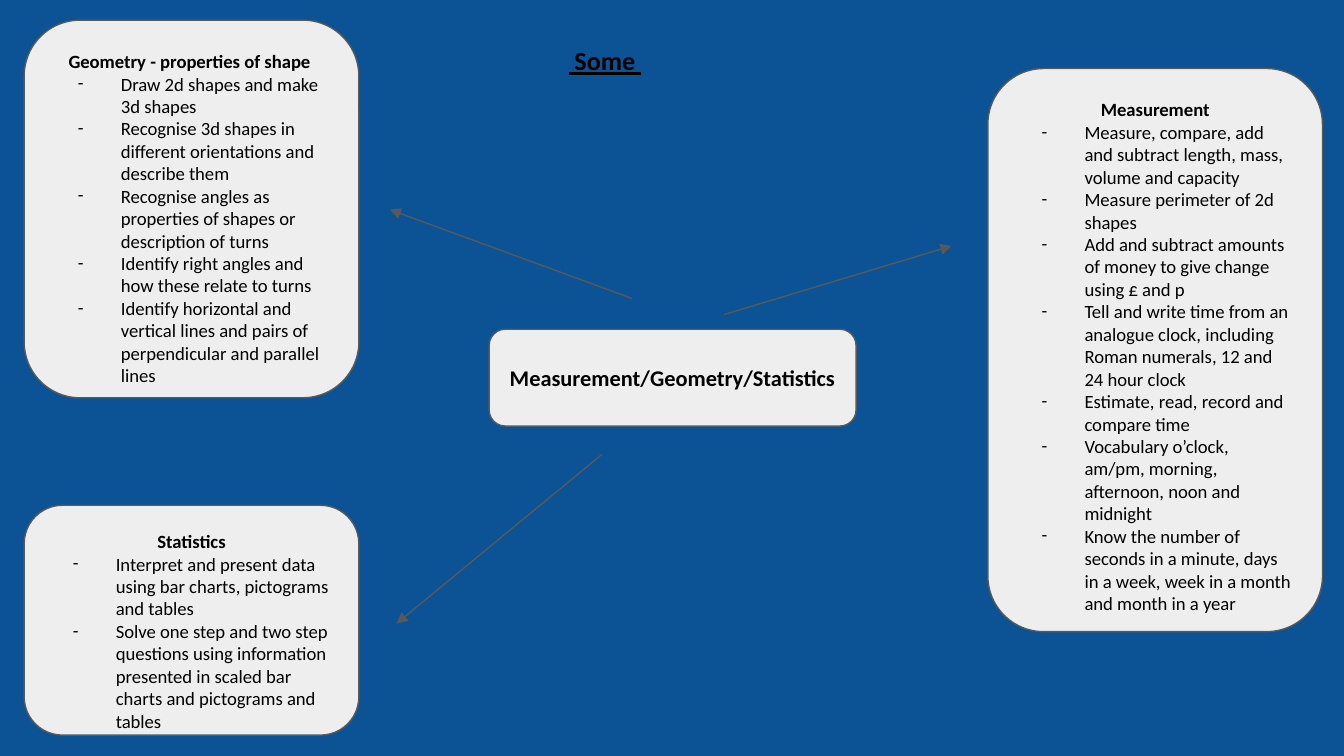
from lxml import etree
from pptx import Presentation
from pptx.dml.color import RGBColor
from pptx.enum import shapes, text
from pptx.oxml.ns import qn
from pptx.util import Inches, Pt

BLUE = RGBColor(0x0B, 0x53, 0x94)
PALE = RGBColor(0xEE, 0xEE, 0xEE)
GREY = RGBColor(0x59, 0x59, 0x59)
BLACK = RGBColor(0, 0, 0)
FONT = "Calibri"

TITLE = " Some "
TOPIC = "Measurement/Geometry/Statistics"
TOPIC_BOX = (3.64, 2.45, 2.73, 0.72)

# (left, top, width, height), heading, objectives
STRANDS = [
    ((7.35, 0.51, 2.49, 4.19), "Measurement", [
        "Measure, compare, add and subtract length, mass, volume and capacity",
        "Measure perimeter of 2d shapes",
        "Add and subtract amounts of money to give change using £ and p",
        "Tell and write time from an analogue clock, including Roman numerals, 12 and 24 hour clock",
        "Estimate, read, record and compare time",
        "Vocabulary o’clock, am/pm, morning, afternoon, noon and midnight",
        "Know the number of seconds in a minute, days in a week, week in a month and month in a year",
    ]),
    ((0.18, 0.15, 2.49, 2.81), "Geometry - properties of shape ", [
        "Draw 2d shapes and make 3d shapes",
        "Recognise 3d shapes in different orientations and describe them",
        "Recognise angles as properties of shapes or description of turns",
        "Identify right angles and how these relate to turns",
        "Identify horizontal and vertical lines and pairs of perpendicular and parallel lines",
    ]),
    ((0.18, 3.76, 2.49, 1.71), "Statistics", [
        "Interpret and present data using bar charts, pictograms and tables",
        "Solve one step and two step questions using information presented in scaled bar charts and pictograms and tables",
    ]),
]

# (from x, from y, to x, to y)
ARROWS = [
    (5.39, 2.34, 7.08, 1.83),
    (4.7, 2.22, 2.9, 1.56),
    (4.48, 3.38, 2.95, 4.64),
]


def set_frame(tf, anchor):
    tf.word_wrap = True
    tf.auto_size = text.MSO_AUTO_SIZE.NONE
    tf.vertical_anchor = anchor
    tf.margin_left = tf.margin_right = Inches(0.1)
    tf.margin_top = tf.margin_bottom = Inches(0.1)


def write(p, words, size, bold=True, align=text.PP_ALIGN.CENTER):
    p.text = words
    p.alignment = align
    for r in p.runs:
        r.font.name = FONT
        r.font.size = Pt(size)
        r.font.bold = bold
        r.font.color.rgb = BLACK


def add_dash(p):
    """Give the paragraph a hanging dash bullet."""
    pPr = p._p.get_or_add_pPr()
    pPr.set("marL", str(Inches(0.5)))
    pPr.set("indent", str(Inches(-0.32)))
    colour = etree.SubElement(pPr, qn("a:buClr"))
    etree.SubElement(colour, qn("a:srgbClr"), val=str(BLACK))
    etree.SubElement(pPr, qn("a:buFont"), typeface=FONT)
    etree.SubElement(pPr, qn("a:buChar"), char="-")


def add_box(s, box, anchor):
    sp = s.shapes.add_shape(shapes.MSO_SHAPE.ROUNDED_RECTANGLE, *map(Inches, box))
    sp.shadow.inherit = False
    sp.fill.solid()
    sp.fill.fore_color.rgb = PALE
    sp.line.color.rgb = GREY
    sp.line.width = Pt(0.75)
    set_frame(sp.text_frame, anchor)
    return sp.text_frame


def add_arrow(s, ends):
    arrow = s.shapes.add_connector(shapes.MSO_CONNECTOR.STRAIGHT, *map(Inches, ends))
    arrow.line.color.rgb = GREY
    arrow.line.width = Pt(0.75)
    spPr = arrow._element.spPr
    etree.SubElement(spPr.find(qn("a:ln")), qn("a:tailEnd"), type="triangle")
    etree.SubElement(spPr, qn("a:effectLst"))


def main():
    prs = Presentation()
    prs.slide_width = Inches(10)
    prs.slide_height = prs.slide_width * 9 // 16
    s = prs.slides.add_slide(prs.slide_layouts[5])
    s.background.fill.solid()
    s.background.fill.fore_color.rgb = BLUE

    title = s.shapes.title
    title.left, title.top = Inches(4.13), Inches(0.23)
    title.width, title.height = Inches(2.19), Inches(0.52)
    set_frame(title.text_frame, text.MSO_ANCHOR.TOP)
    p = title.text_frame.paragraphs[0]
    write(p, TITLE, 14, align=text.PP_ALIGN.LEFT)
    p.runs[0].font.underline = True

    tf = add_box(s, TOPIC_BOX, text.MSO_ANCHOR.MIDDLE)
    write(tf.paragraphs[0], TOPIC, 12)

    for box, heading, objectives in STRANDS:
        tf = add_box(s, box, text.MSO_ANCHOR.TOP)
        write(tf.paragraphs[0], heading, 10)
        for objective in objectives:
            p = tf.add_paragraph()
            add_dash(p)
            write(p, objective, 10, bold=False, align=text.PP_ALIGN.LEFT)

    for ends in ARROWS:
        add_arrow(s, ends)

    prs.save("out.pptx")


if __name__ == "__main__":
    main()
